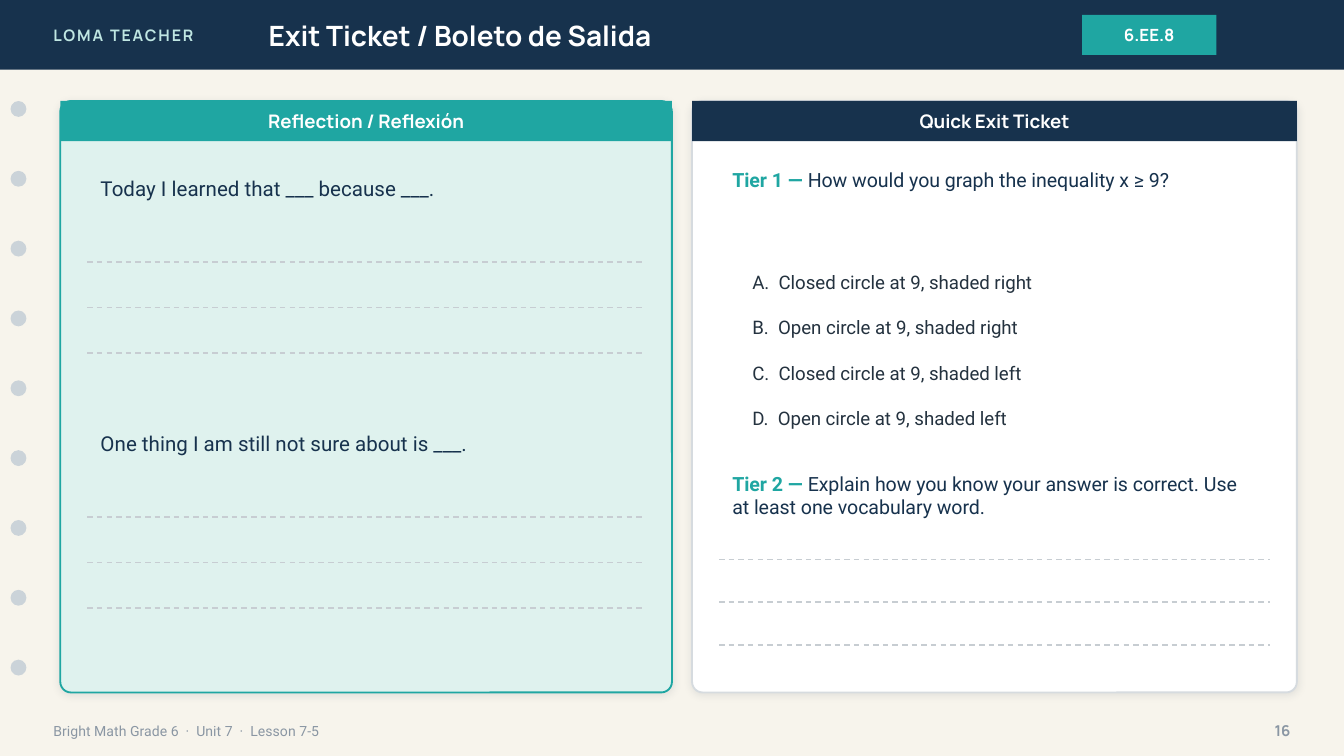
from lxml.etree import SubElement
from pptx import Presentation
from pptx.dml.color import RGBColor
from pptx.enum.dml import MSO_LINE
from pptx.enum.shapes import MSO_CONNECTOR, MSO_SHAPE
from pptx.enum.text import MSO_ANCHOR, PP_ALIGN
from pptx.oxml import parse_xml
from pptx.oxml.ns import nsdecls, qn
from pptx.util import Cm, Pt

NAVY = RGBColor(0x17, 0x32, 0x4D)
TEAL = RGBColor(0x1F, 0xA6, 0xA2)
MINT = RGBColor(0xDF, 0xF2, 0xEE)
PALE_TEAL = RGBColor(0xBF, 0xE6, 0xE2)
CREAM = RGBColor(0xF7, 0xF4, 0xEC)
WHITE = RGBColor(0xFF, 0xFF, 0xFF)
INK = RGBColor(0x24, 0x32, 0x3F)
GREY = RGBColor(0x8A, 0x96, 0xA3)
DOT_GREY = RGBColor(0xCB, 0xD3, 0xD9)
RULE_GREY = RGBColor(0xC7, 0xCD, 0xD2)
BORDER_GREY = RGBColor(0xD6, 0xDB, 0xDF)

# Content
BRAND = "LOMA TEACHER"
TITLE = "Exit Ticket / Boleto de Salida"
STANDARD = "6.EE.8"
FOOTER = "Bright Math Grade 6  ·  Unit 7  ·  Lesson 7-5"
PAGE_NUMBER = "16"
REFLECTION_HEADING = "Reflection / Reflexión"
REFLECTION_PROMPTS = [
    (3.05, "Today I learned that ___ because ___."),
    (7.87, "One thing I am still not sure about is ___."),
]
TICKET_HEADING = "Quick Exit Ticket"
TIERS = [
    (3.05, 1.78, "Tier 1 — ", "How would you graph the inequality x ≥ 9?"),
    (8.79, 1.4, "Tier 2 — ",
     "Explain how you know your answer is correct. Use at least one vocabulary word."),
]
CHOICES = [
    "A.  Closed circle at 9, shaded right",
    "B.  Open circle at 9, shaded right",
    "C.  Closed circle at 9, shaded left",
    "D.  Open circle at 9, shaded left",
]

# Layout in centimetres
BAR_HEIGHT = 1.32
MARGIN = 0.76
FOOTER_TOP, FOOTER_HEIGHT = 13.46, 0.71
DOT_COUNT, DOT_LEFT, DOT_SIZE, DOT_PITCH = 9, 0.2, 0.3, 1.32
CARD_TOP, CARD_HEIGHT, HEADING_HEIGHT = 1.91, 11.18, 0.76
REFLECTION_LEFT, REFLECTION_WIDTH = 1.14, 11.56
TICKET_LEFT, TICKET_WIDTH = 13.08, 11.43
PADDING, CHOICE_INDENT = 0.51, 0.89
ROW_PITCH = 0.86

presentation = Presentation()
presentation.slide_width, presentation.slide_height = Cm(25.4), Cm(14.29)
slide = presentation.slides.add_slide(presentation.slide_layouts[6])
slide.background.fill.solid()
slide.background.fill.fore_color.rgb = CREAM


def write(shape, text, lead="", lead_color=TEAL, size=10, font="Roboto", color=NAVY,
          bold=False, align=PP_ALIGN.LEFT, anchor=MSO_ANCHOR.MIDDLE, spacing=0):
    frame = shape.text_frame
    frame.word_wrap = True
    frame.vertical_anchor = anchor
    paragraph = frame.paragraphs[0]
    paragraph.alignment = align
    for words, tint, weight in ((lead, lead_color, True), (text, color, bold)):
        if not words:
            continue
        run = paragraph.add_run()
        run.text = words
        run.font.size, run.font.name, run.font.bold = Pt(size), font, weight
        run.font.color.rgb = tint
        if spacing:
            run.font._element.set("spc", str(spacing))


def add_text(left, top, width, height, text, **style):
    box = slide.shapes.add_textbox(Cm(left), Cm(top), Cm(width), Cm(height))
    write(box, text, **style)


def add_block(kind, left, top, width, height, fill, border=None):
    shape = slide.shapes.add_shape(kind, Cm(left), Cm(top), Cm(width), Cm(height))
    shape.shadow.inherit = False
    shape.fill.solid()
    shape.fill.fore_color.rgb = fill
    if border is None:
        shape.line.fill.background()
    else:
        shape.line.color.rgb = border
        shape.line.width = Pt(1)
    return shape


def add_card(left, width, fill, border, heading, heading_fill):
    card = add_block(MSO_SHAPE.ROUNDED_RECTANGLE, left, CARD_TOP, width, CARD_HEIGHT,
                     fill, border)
    card.adjustments[0] = 0.018
    effects = card._element.spPr.find(qn("a:effectLst"))
    effects.append(parse_xml(
        f'<a:outerShdw {nsdecls("a")} blurRad="{Pt(4)}" dist="{Pt(1)}" dir="5400000" '
        'algn="bl" rotWithShape="0"><a:srgbClr val="1C2E42"><a:alpha val="10000"/>'
        '</a:srgbClr></a:outerShdw>'))
    band = add_block(MSO_SHAPE.RECTANGLE, left, CARD_TOP, width, HEADING_HEIGHT, heading_fill)
    write(band, heading, font="Manrope", color=WHITE, bold=True, align=PP_ALIGN.CENTER)


def add_writing_lines(left, top, width, pitch, count=3):
    for index in range(count):
        y = Cm(top + index * pitch)
        line = slide.shapes.add_connector(MSO_CONNECTOR.STRAIGHT,
                                          Cm(left), y, Cm(left + width), y)
        line.line.color.rgb = RULE_GREY
        line.line.width = Pt(0.75)
        line.line.dash_style = MSO_LINE.DASH
        SubElement(line._element.spPr, qn("a:effectLst"))


# Title bar
add_block(MSO_SHAPE.RECTANGLE, 0, 0, 25.4, BAR_HEIGHT, NAVY)
add_text(MARGIN, 0, 6.1, BAR_HEIGHT, BRAND, size=8.5, font="Manrope",
         color=PALE_TEAL, bold=True, spacing=100)
add_text(4.83, 0, 14.22, BAR_HEIGHT, TITLE, size=15, font="Manrope", color=WHITE, bold=True)
badge = add_block(MSO_SHAPE.RECTANGLE, 20.45, 0.28, 2.54, 0.76, TEAL)
write(badge, STANDARD, size=9, font="Manrope", color=WHITE, bold=True, align=PP_ALIGN.CENTER)

# Binder holes
for index in range(DOT_COUNT):
    add_block(MSO_SHAPE.OVAL, DOT_LEFT, CARD_TOP + index * DOT_PITCH,
              DOT_SIZE, DOT_SIZE, DOT_GREY)

# Footer
add_text(MARGIN, FOOTER_TOP, 17.78, FOOTER_HEIGHT, FOOTER, size=7.5, color=GREY)
add_text(23.37, FOOTER_TOP, 1.27, FOOTER_HEIGHT, PAGE_NUMBER, size=8, font="Manrope",
         color=GREY, bold=True, align=PP_ALIGN.RIGHT)

# Reflection card
add_card(REFLECTION_LEFT, REFLECTION_WIDTH, MINT, TEAL, REFLECTION_HEADING, TEAL)
inner_left, inner_width = REFLECTION_LEFT + PADDING, REFLECTION_WIDTH - 2 * PADDING
for top, prompt in REFLECTION_PROMPTS:
    add_text(inner_left, top, inner_width, 1.02, prompt, size=11)
    add_writing_lines(inner_left, top + 1.9, inner_width, ROW_PITCH)

# Exit ticket card
add_card(TICKET_LEFT, TICKET_WIDTH, WHITE, BORDER_GREY, TICKET_HEADING, NAVY)
inner_left, inner_width = TICKET_LEFT + PADDING, TICKET_WIDTH - 2 * PADDING
for top, height, label, question in TIERS:
    add_text(inner_left, top, inner_width, height, question, lead=label, size=10.5,
             anchor=MSO_ANCHOR.TOP)
for index, choice in enumerate(CHOICES):
    add_text(TICKET_LEFT + CHOICE_INDENT, 4.95 + index * ROW_PITCH, 9.91, 0.76,
             choice, color=INK)
add_writing_lines(inner_left, 10.57, inner_width, 0.81)

presentation.save("out.pptx")
